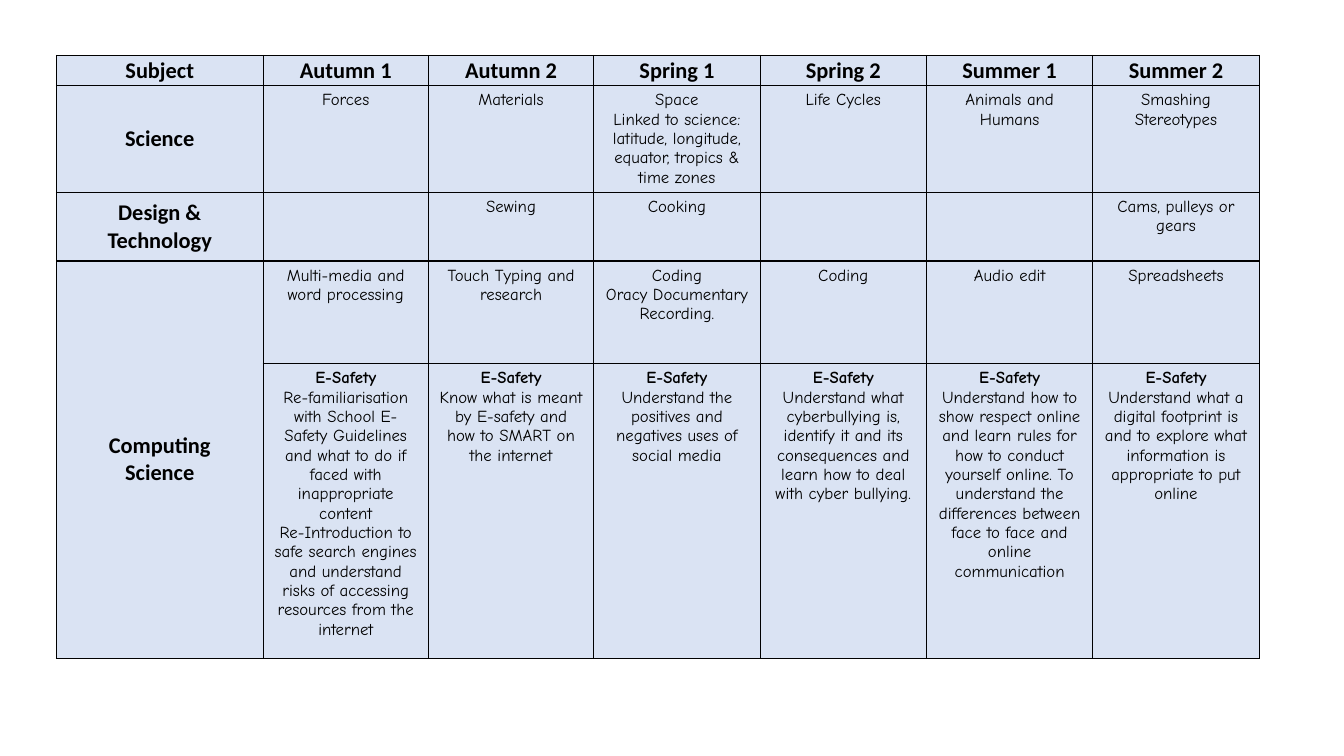
from lxml.etree import SubElement
from pptx import Presentation
from pptx.dml.color import RGBColor
from pptx.enum.text import MSO_ANCHOR as Anchor, PP_ALIGN as Align
from pptx.oxml.ns import qn
from pptx.util import Inches, Pt

BLACK = RGBColor(0x00, 0x00, 0x00)
PALE_BLUE = RGBColor(0xDA, 0xE3, 0xF3)

COLUMN_WIDTHS = [2.05] + [1.64] * 2 + [1.65] * 4
ROW_HEIGHTS = [0.3, 1.06, 0.68, 1.02, 2.92]

TERMS = ["Autumn 1", "Autumn 2", "Spring 1", "Spring 2", "Summer 1", "Summer 2"]
SUBJECTS = {1: ["Science"], 2: ["Design & Technology"], 3: ["Computing", "Science"]}
TOPICS = [
    [
        ["Forces"],
        ["Materials"],
        ["Space", "Linked to science: latitude, longitude, equator, tropics & time zones"],
        ["Life Cycles"],
        ["Animals and Humans"],
        ["Smashing Stereotypes"],
    ],
    [[], ["Sewing"], ["Cooking"], [], [], ["Cams, pulleys or gears"]],
    [
        ["Multi-media and word processing"],
        ["Touch Typing and research"],
        ["Coding", "Oracy Documentary Recording."],
        ["Coding"],
        ["Audio edit"],
        ["Spreadsheets"],
    ],
]
E_SAFETY = [
    ["Re-familiarisation with School E-Safety Guidelines and what to do if faced with "
     "inappropriate content",
     "Re-Introduction to safe search engines and understand risks of accessing resources "
     "from the internet"],
    ["Know what is meant by E-safety and how to SMART on the internet"],
    ["Understand the positives and negatives uses of social media"],
    ["Understand what cyberbullying is, identify it and its consequences and learn how to "
     "deal with cyber bullying."],
    ["Understand how to show respect online and learn rules for how to conduct yourself "
     "online. To understand the differences between face to face and online communication"],
    ["Understand what a digital footprint is and to explore what information is "
     "appropriate to put online"],
]


def write(cell, lines, *, font="Comic Neue", size=12, bold_lines=0, anchor=Anchor.TOP):
    cell.vertical_anchor = anchor
    for index, line in enumerate(lines):
        frame = cell.text_frame
        paragraph = frame.add_paragraph() if index else frame.paragraphs[0]
        paragraph.alignment = Align.CENTER
        run = paragraph.add_run()
        run.text = line
        run.font.name = font
        run.font.size = Pt(size)
        run.font.bold = index < bold_lines
        run.font.color.rgb = BLACK


def write_heading(cell, lines):
    write(cell, lines, font="Calibri", size=16, bold_lines=len(lines), anchor=Anchor.MIDDLE)


def style_cell(cell):
    properties = cell._tc.get_or_add_tcPr()
    for side in ("lnL", "lnR", "lnT", "lnB"):
        border = SubElement(properties, qn(f"a:{side}"), w=str(Pt(1)))
        colour = SubElement(border, qn("a:solidFill"))
        SubElement(colour, qn("a:srgbClr"), val=str(BLACK))
    cell.fill.solid()
    cell.fill.fore_color.rgb = PALE_BLUE


def add_curriculum_grid(slide):
    grid = slide.shapes.add_table(
        len(ROW_HEIGHTS), len(COLUMN_WIDTHS), Inches(0.56), Inches(0.55),
        Inches(sum(COLUMN_WIDTHS)), Inches(sum(ROW_HEIGHTS)),
    ).table
    grid.horz_banding = False
    for column, width in zip(grid.columns, COLUMN_WIDTHS):
        column.width = Inches(width)
    for row, height in zip(grid.rows, ROW_HEIGHTS):
        row.height = Inches(height)
    for cell in grid.iter_cells():
        style_cell(cell)
    return grid


def fill_headings(grid):
    for column, heading in enumerate(["Subject"] + TERMS):
        cell = grid.cell(0, column)
        cell.margin_left = cell.margin_right = Inches(0.03)
        cell.margin_top = cell.margin_bottom = Inches(0.01)
        write_heading(cell, [heading])
    grid.cell(3, 0).merge(grid.cell(4, 0))
    for row, subject in SUBJECTS.items():
        write_heading(grid.cell(row, 0), subject)


def fill_topics(grid):
    for row, topics in enumerate(TOPICS, start=1):
        for column, lines in enumerate(topics, start=1):
            write(grid.cell(row, column), lines)
    for column, aims in enumerate(E_SAFETY, start=1):
        write(grid.cell(4, column), ["E-Safety"] + aims, bold_lines=1)


def main():
    deck = Presentation()
    deck.slide_width, deck.slide_height = Inches(13.33), Inches(7.5)
    slide = deck.slides.add_slide(deck.slide_layouts[6])
    grid = add_curriculum_grid(slide)
    fill_headings(grid)
    fill_topics(grid)
    deck.save("out.pptx")


if __name__ == "__main__":
    main()
